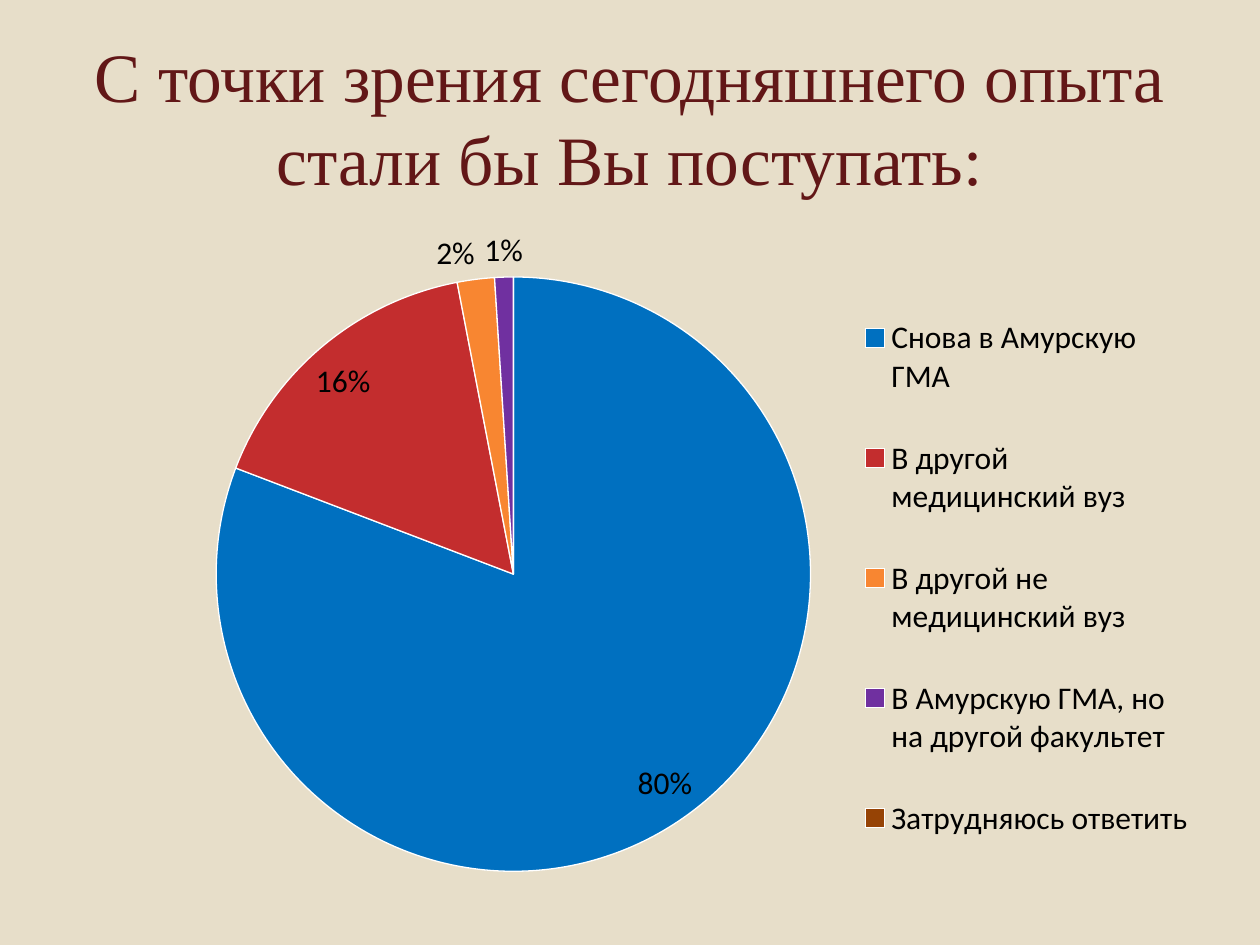
from lxml.etree import SubElement
from pptx import Presentation
from pptx.chart.data import CategoryChartData
from pptx.dml.color import RGBColor
from pptx.enum.chart import XL_CHART_TYPE, XL_LABEL_POSITION, XL_LEGEND_POSITION
from pptx.enum.text import MSO_ANCHOR, PP_ALIGN
from pptx.oxml.ns import qn
from pptx.util import Inches, Pt

TITLE = "С точки зрения сегодняшнего опыта стали бы Вы поступать:"
ANSWERS = [
    ("Снова в Амурскую ГМА", 80, "blue"),
    ("В другой медицинский вуз", 16, "red"),
    ("В другой не медицинский вуз", 2, "orange"),
    ("В Амурскую ГМА, но на другой факультет", 1, "purple"),
    ("Затрудняюсь ответить", 0, "brown"),
]
COLORS = {
    "background": "E7DEC9", "title": "621717", "text": "000000", "edge": "FFFFFF",
    "blue": "0070C0", "red": "C32D2E", "orange": "F88631",
    "purple": "7030A0", "brown": "964305",
}
WIDTH, HEIGHT = 10, 7.5
TITLE_PERCENT = (5, 4, 90, 16.67)
CHART_PERCENT = (13.8, 22.67, 81.9, 71.33)
PIE_PERCENT = (4.1, 9.3, 57.6, 88.2)
LEGEND_PERCENT = (67, 9, 32, 90)


def color(name):
    return RGBColor.from_string(COLORS[name])


def place(percent):
    return [Inches(part * side / 100) for part, side in zip(percent, (WIDTH, HEIGHT) * 2)]


def set_layout(element, percent, inner=False):
    layout = element.find(qn("c:layout"))
    if layout is None:
        layout = SubElement(element, qn("c:layout"))
        anchor = element.find(qn("c:legendPos"))
        if anchor is None:
            element.insert(0, layout)
        else:
            anchor.addnext(layout)
    manual = SubElement(layout, qn("c:manualLayout"))
    settings = [("layoutTarget", "inner")] if inner else []
    settings += [("xMode", "edge"), ("yMode", "edge")]
    settings += [(side, part / 100) for side, part in zip("xywh", percent)]
    for tag, value in settings:
        SubElement(manual, qn(f"c:{tag}"), val=str(value))


def add_title(page):
    box = page.shapes.add_textbox(*place(TITLE_PERCENT))
    frame = box.text_frame
    frame.text = TITLE
    frame.word_wrap = True
    frame.vertical_anchor = MSO_ANCHOR.MIDDLE
    para = frame.paragraphs[0]
    para.alignment = PP_ALIGN.CENTER
    font = para.runs[0].font
    font.name, font.size = "Times New Roman", Pt(39.6)
    font.color.rgb = color("title")


def add_pie(page):
    names, values, fills = zip(*ANSWERS)
    data = CategoryChartData()
    data.categories = names
    data.add_series("Series 1", values)
    chart = page.shapes.add_chart(XL_CHART_TYPE.PIE, *place(CHART_PERCENT), data).chart
    chart.has_title = False
    chart.font.name, chart.font.size = "Calibri", Pt(18)
    chart.font.color.rgb = color("text")

    plot = chart.plots[0]
    plot.vary_by_categories = True
    for index, fill in enumerate(fills):
        slice_format = plot.series[0].points[index].format
        slice_format.fill.solid()
        slice_format.fill.fore_color.rgb = color(fill)
        slice_format.line.color.rgb = color("edge")
        slice_format.line.width = Pt(0.75)

    plot.has_data_labels = True
    labels = plot.data_labels
    labels.show_value = True
    labels.show_percentage = False
    labels.number_format = '0"%";;'
    labels.number_format_is_linked = False
    labels.position = XL_LABEL_POSITION.BEST_FIT

    chart.has_legend = True
    chart.legend.position = XL_LEGEND_POSITION.RIGHT
    chart.legend.include_in_layout = False
    set_layout(chart.element.find(".//" + qn("c:plotArea")), PIE_PERCENT, inner=True)
    set_layout(chart.element.find(".//" + qn("c:legend")), LEGEND_PERCENT)


def main():
    """Build the survey slide with its title and pie chart."""
    deck = Presentation()
    deck.slide_width, deck.slide_height = Inches(WIDTH), Inches(HEIGHT)
    page = deck.slides.add_slide(deck.slide_layouts[6])
    page.background.fill.solid()
    page.background.fill.fore_color.rgb = color("background")
    add_title(page)
    add_pie(page)
    deck.save("out.pptx")


if __name__ == "__main__":
    main()
